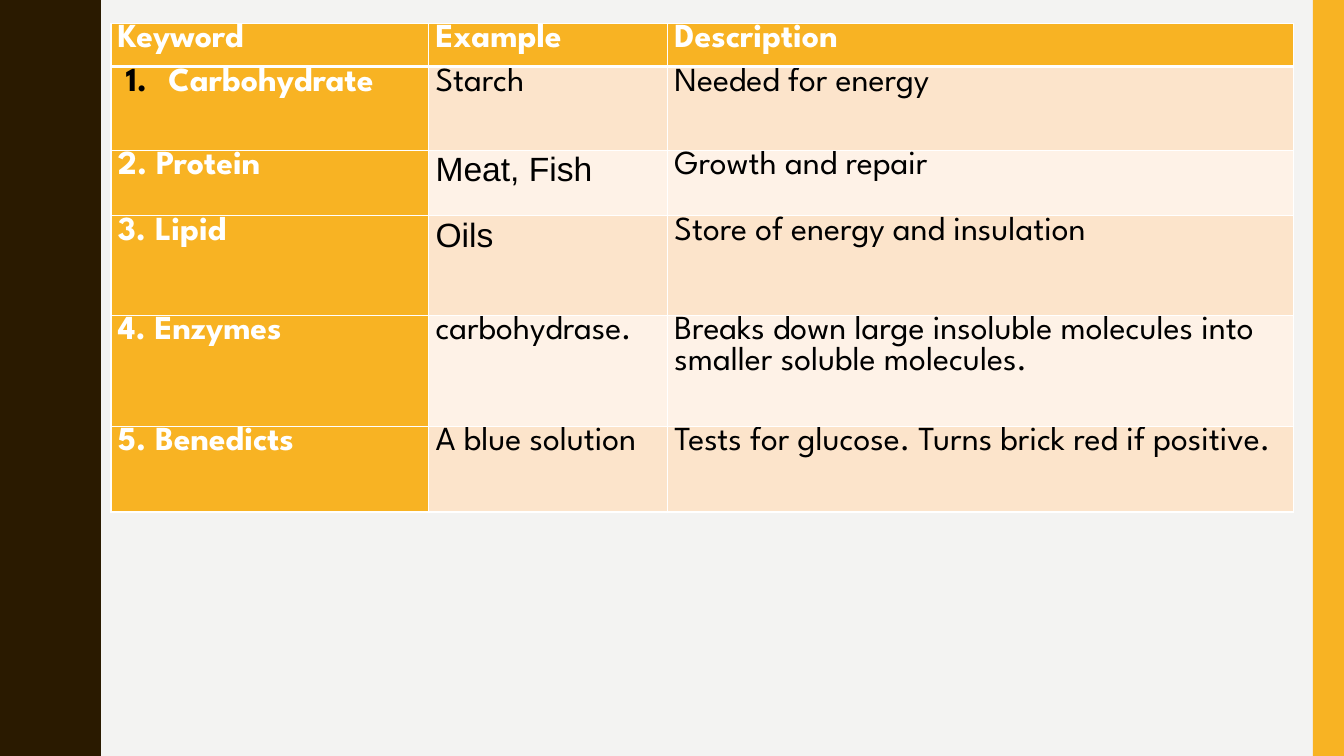
from lxml import etree
from pptx import Presentation
from pptx import util as u
from pptx.dml.color import RGBColor
from pptx.enum import shapes
from pptx.oxml import ns

COLORS = {
    "background": "F3F3F2", "brown": "2A1A00", "amber": "F8B323",
    "band_dark": "FCE4CB", "band_light": "FEF2E7",
    "white": "FFFFFF", "black": "000000",
}
FONT = "League Spartan"
NUMBERED = "Carbohydrate"
COLUMN_WIDTHS = [3.15, 2.37, 6.21]
ROW_HEIGHTS = [0.43, 0.83, 0.65, 0.99, 1.1, 0.85]
ROWS = [
    ["Keyword", "Example", "Description"],
    [NUMBERED, "Starch", "Needed for energy"],
    ["2. Protein", "Meat, Fish", "Growth and repair"],
    ["3. Lipid", "Oils", "Store of energy and insulation"],
    ["4. Enzymes", "carbohydrase.",
     "Breaks down large insoluble molecules into smaller soluble molecules."],
    ["5. Benedicts", "A blue solution",
     "Tests for glucose. Turns brick red if positive."],
]
ARIAL_TEXTS = {"Meat, Fish", "Oils"}

# Distance down and across for the outward half of one wave
WAVE_PERIOD = 1.5
HALF_WAVE = [
    (0, 0.78), (0.07, 0.78), (0.14, 0.79), (0.2, 0.8), (0.25, 0.81),
    (0.29, 0.83), (0.33, 0.85), (0.38, 0.87), (0.42, 0.89), (0.46, 0.91),
    (0.5, 0.93), (0.55, 0.95), (0.61, 0.96), (0.68, 0.97), (0.75, 0.97),
]


def rgb(name):
    return RGBColor.from_string(COLORS[name])


def paint(shape, color):
    shape.shadow.inherit = False
    shape.fill.solid()
    shape.fill.fore_color.rgb = rgb(color)
    shape.line.fill.background()


def add_wavy_edge(page, left, top, height):
    """Dark band whose right side is a repeated wave."""
    inward = [(WAVE_PERIOD - y, x) for y, x in reversed(HALF_WAVE[1:-1])]
    wave = HALF_WAVE + inward
    points = [(left + x, top + turn * WAVE_PERIOD + y)
              for turn in range(round(height / WAVE_PERIOD)) for y, x in wave]
    points += [(left + HALF_WAVE[0][1], top + height), (left, top + height)]
    builder = page.shapes.build_freeform(left, top, scale=u.Inches(1))
    builder.add_line_segments(points, close=True)
    paint(builder.convert_to_shape(), "brown")


def add_side_bar(page, left, top, width, height):
    bar = page.shapes.add_shape(
        shapes.MSO_SHAPE.RECTANGLE, u.Inches(left), u.Inches(top),
        u.Inches(width), u.Inches(height))
    paint(bar, "amber")


def set_borders(cell, widths):
    """Draw white borders; widths maps each side to points."""
    properties = cell._tc.get_or_add_tcPr()
    for side, width in widths.items():
        line = etree.SubElement(properties, ns.qn(f"a:ln{side}"),
                                w=str(u.Pt(width)))
        fill = etree.SubElement(line, ns.qn("a:solidFill"))
        etree.SubElement(fill, ns.qn("a:srgbClr"), val=COLORS["white"])


def number_paragraph(para):
    properties = para._p.get_or_add_pPr()
    properties.set("marL", str(u.Inches(0.5)))
    properties.set("indent", str(u.Inches(-0.42)))
    color = etree.SubElement(properties, ns.qn("a:buClr"))
    etree.SubElement(color, ns.qn("a:srgbClr"), val=COLORS["black"])
    etree.SubElement(properties, ns.qn("a:buFont"), typeface="+mj-lt")
    etree.SubElement(properties, ns.qn("a:buAutoNum"), type="arabicPeriod")


def fill_cell(cell, content, row, column):
    heading = row == 0 or column == 0
    set_borders(cell, {"L": 1, "R": 1, "T": 3 if row == 1 else 1,
                       "B": 3 if row == 0 else 1})
    cell.fill.solid()
    band = "band_dark" if row % 2 else "band_light"
    cell.fill.fore_color.rgb = rgb("amber" if heading else band)
    cell.margin_left = cell.margin_right = u.Inches(0.07)
    cell.margin_top = cell.margin_bottom = u.Inches(0.01)

    para = cell.text_frame.paragraphs[0]
    para.text = content
    if content == NUMBERED:
        number_paragraph(para)
    font = para.runs[0].font
    font.name = "Arial" if content in ARIAL_TEXTS else FONT
    font.size = u.Pt(24)
    font.bold = heading
    font.color.rgb = rgb("white" if heading else "black")


def add_keyword_table(page, left, top):
    frame = page.shapes.add_table(
        len(ROWS), len(COLUMN_WIDTHS), u.Inches(left), u.Inches(top),
        u.Inches(sum(COLUMN_WIDTHS)), u.Inches(sum(ROW_HEIGHTS)))
    table = frame.table
    for column, width in zip(table.columns, COLUMN_WIDTHS):
        column.width = u.Inches(width)
    for row, height in zip(table.rows, ROW_HEIGHTS):
        row.height = u.Inches(height)
    for row, contents in enumerate(ROWS):
        for column, content in enumerate(contents):
            fill_cell(table.cell(row, column), content, row, column)


def main():
    deck = Presentation()
    deck.slide_width, deck.slide_height = u.Inches(13.33), u.Inches(7.5)
    page = deck.slides.add_slide(deck.slide_layouts.get_by_name("Blank"))
    page.background.fill.solid()
    page.background.fill.fore_color.rgb = rgb("background")

    add_wavy_edge(page, 0, 0, 7.5)
    add_side_bar(page, 13.02, 0, 0.31, 7.5)
    add_keyword_table(page, 1.1, 0.23)
    deck.save("out.pptx")


if __name__ == "__main__":
    main()
